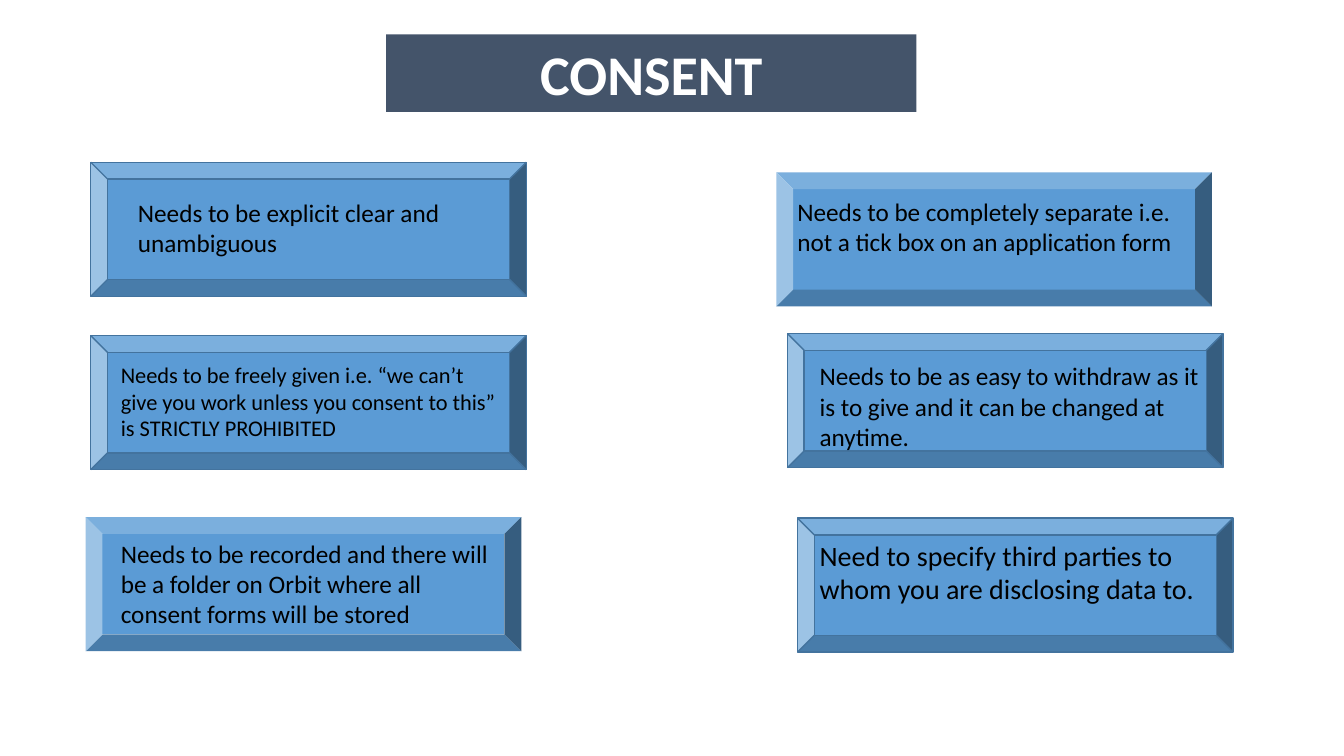
import pptx
import pptx.util
import pptx.dml.color
import pptx.enum.shapes
import pptx.enum.text

Inches = pptx.util.Inches
RGBColor = pptx.dml.color.RGBColor

SLATE = RGBColor(0x44, 0x54, 0x6A)
BLUE = RGBColor(0x5B, 0x9B, 0xD5)
EDGE = RGBColor(0x43, 0x73, 0x9E)
WHITE = RGBColor(0xFF, 0xFF, 0xFF)
BLACK = RGBColor(0, 0, 0)

PANEL_SIZE = (4.32, 1.33)

# panel corner, edged, text box, text size, text
PANELS = [
    ((0.9, 1.61), True, (1.27, 1.91, 3.59, 0.71), 18,
     "Needs to be explicit clear and unambiguous"),
    ((0.9, 3.33), True, (1.1, 3.53, 3.94, 0.91), 16,
     "Needs to be freely given i.e. “we can’t give you work unless "
     "you consent to this” is STRICTLY PROHIBITED"),
    ((0.85, 5.13), False, (1.1, 5.29, 3.94, 1.01), 18,
     "Needs to be recorded and there will be a folder on Orbit where all "
     "consent forms will be stored"),
    ((7.7, 1.71), False, (7.81, 1.9, 4.07, 0.71), 18,
     "Needs to be completely separate i.e. not a tick box on an "
     "application form"),
    ((7.81, 3.31), True, (8.03, 3.53, 3.99, 1.01), 18,
     "Needs to be as easy to withdraw as it is to give and it can be "
     "changed at anytime."),
    ((7.91, 5.14), True, (8.03, 5.29, 4.32, 0.77), 20,
     "Need to specify third parties to whom you are disclosing data to."),
]


def set_text(shape, text, size, color, bold=False):
    frame = shape.text_frame
    frame.word_wrap = True
    frame.text = text
    para = frame.paragraphs[0]
    para.font.name = "Calibri"
    para.font.size = pptx.util.Pt(size)
    para.font.bold = bold
    para.font.color.rgb = color
    return para


def add_title(slide, text):
    title = slide.shapes.title
    title.left, title.top = Inches(3.83), Inches(0.34)
    title.width, title.height = Inches(5.26), Inches(0.77)
    title.fill.solid()
    title.fill.fore_color.rgb = SLATE
    para = set_text(title, text, 40, WHITE, bold=True)
    para.alignment = pptx.enum.text.PP_ALIGN.CENTER


def add_panel(slide, corner, edged, box, size, text):
    """Group a bevel with the text that lies on it."""
    group = slide.shapes.add_group_shape()
    bevel = group.shapes.add_shape(
        pptx.enum.shapes.MSO_SHAPE.BEVEL,
        *map(Inches, corner + PANEL_SIZE))
    bevel.shadow.inherit = False
    bevel.fill.solid()
    bevel.fill.fore_color.rgb = BLUE
    if edged:
        bevel.line.color.rgb = EDGE
        bevel.line.width = pptx.util.Pt(1)
    else:
        bevel.line.fill.background()
    label = group.shapes.add_textbox(*map(Inches, box))
    set_text(label, text, size, BLACK)


def main():
    deck = pptx.Presentation()
    deck.slide_width, deck.slide_height = Inches(13.33), Inches(7.5)
    slide = deck.slides.add_slide(deck.slide_layouts.get_by_name("Title Only"))
    add_title(slide, "CONSENT")
    for panel in PANELS:
        add_panel(slide, *panel)
    deck.save("out.pptx")


if __name__ == "__main__":
    main()
